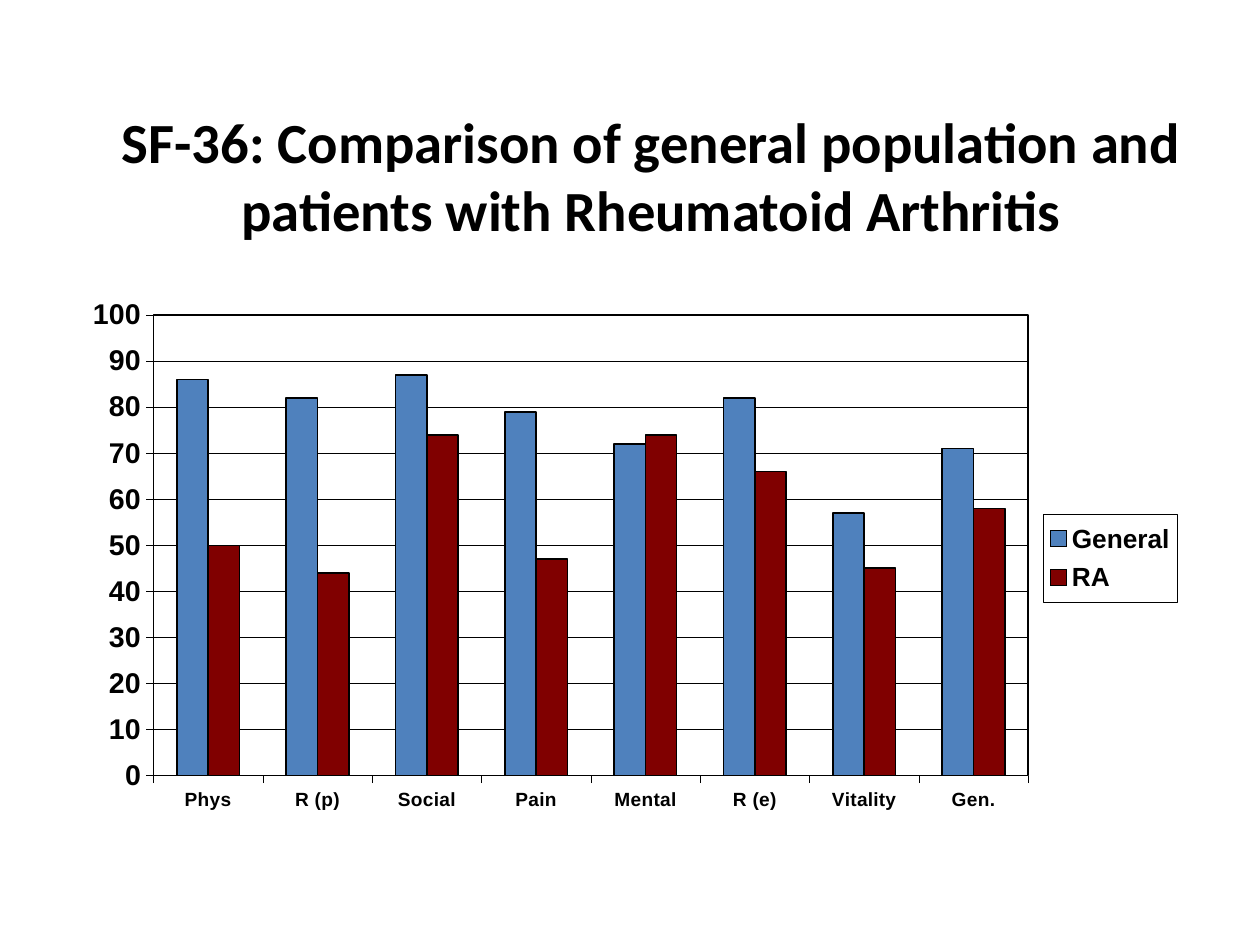
from lxml.etree import SubElement
from pptx import Presentation
from pptx.chart.data import CategoryChartData
from pptx.dml.color import RGBColor
from pptx.enum.chart import XL_CHART_TYPE, XL_LEGEND_POSITION, XL_TICK_LABEL_POSITION, XL_TICK_MARK
from pptx.enum.text import MSO_ANCHOR, MSO_AUTO_SIZE, PP_ALIGN
from pptx.oxml import parse_xml
from pptx.oxml.ns import nsdecls, qn
from pptx.util import Cm, Pt

COLORS = {"ink": "000000", "general": "4F81BD", "ra": "800000"}
CATEGORIES = ["Phys", "R (p)", "Social", "Pain", "Mental", "R (e)", "Vitality", "Gen."]
SERIES = [
    ("General", "general", [86, 82, 87, 79, 72, 82, 57, 71]),
    ("RA", "ra", [50, 44, 74, 47, 74, 66, 45, 58]),
]


def rgb(name):
    return RGBColor.from_string(COLORS[name])


def frame_xml(width):
    """Unfilled chart area with a black outline, width in points."""
    return parse_xml(
        f'<c:spPr {nsdecls("c", "a")}><a:noFill/><a:ln w="{Pt(width)}"><a:solidFill>'
        f'<a:srgbClr val="{COLORS["ink"]}"/></a:solidFill></a:ln></c:spPr>')


def layout_xml(x, y, w, h, inner=False):
    """Manual layout, in fractions of the chart."""
    layout = parse_xml(f'<c:layout {nsdecls("c")}><c:manualLayout/></c:layout>')
    values = [("layoutTarget", "inner")] if inner else []
    values += [("xMode", "edge"), ("yMode", "edge"), ("x", x), ("y", y), ("w", w), ("h", h)]
    for tag, value in values:
        SubElement(layout[0], qn(f"c:{tag}")).set("val", str(value))
    return layout


class Deck:
    def __init__(self, width, height):
        self.prs = Presentation()
        self.prs.slide_width, self.prs.slide_height = Cm(width), Cm(height)
        self.s = self.prs.slides.add_slide(self.prs.slide_layouts[5])

    def font(self, font, size, name="Arial"):
        font.name, font.size, font.bold = name, Pt(size), True
        font.color.rgb = rgb("ink")

    def line(self, line, width):
        line.color.rgb = rgb("ink")
        line.width = Pt(width)

    def title(self, text, x, y, w, h):
        sp = self.s.shapes.title
        sp.left, sp.top, sp.width, sp.height = Cm(x), Cm(y), Cm(w), Cm(h)
        tf = sp.text_frame
        tf.text = text
        tf.word_wrap = True
        tf.auto_size = MSO_AUTO_SIZE.NONE
        tf.vertical_anchor = MSO_ANCHOR.MIDDLE
        p = tf.paragraphs[0]
        p.alignment = PP_ALIGN.CENTER
        self.font(p.font, 32.4, "Calibri")

    def axis(self, axis, size):
        axis.major_tick_mark = XL_TICK_MARK.OUTSIDE
        axis.minor_tick_mark = XL_TICK_MARK.NONE
        self.font(axis.tick_labels.font, size)
        self.line(axis.format.line, 0.23)

    def legend(self, chart):
        chart.has_legend = True
        legend = chart.legend
        legend.position = XL_LEGEND_POSITION.RIGHT
        legend.include_in_layout = False
        self.font(legend.font, 15)
        overlay = legend._element.find(qn("c:overlay"))
        overlay.addprevious(layout_xml(0.85, 0.42, 0.12, 0.16))
        overlay.addnext(frame_xml(0.23))

    def column_chart(self, x, y, w, h):
        data = CategoryChartData()
        data.categories = CATEGORIES
        for name, _, values in SERIES:
            data.add_series(name, values)
        chart = self.s.shapes.add_chart(
            XL_CHART_TYPE.COLUMN_CLUSTERED, Cm(x), Cm(y), Cm(w), Cm(h), data).chart
        chart.has_title = False
        self.font(chart.font, 16.3)

        self.axis(chart.category_axis, 10.9)
        chart.category_axis.tick_label_position = XL_TICK_LABEL_POSITION.LOW
        value_axis = chart.value_axis
        self.axis(value_axis, 16.3)
        value_axis.minimum_scale, value_axis.maximum_scale = 0, 100
        value_axis.major_unit = 10
        value_axis.has_major_gridlines = True
        self.line(value_axis.major_gridlines.format.line, 0.23)

        plot = chart.plots[0]
        plot.gap_width, plot.overlap = 150, 0
        plot.vary_by_categories = False
        for series, (_, color, _) in zip(plot.series, SERIES):
            series.format.fill.solid()
            series.format.fill.fore_color.rgb = rgb(color)
            self.line(series.format.line, 0.91)

        area = chart._chartSpace.chart.plotArea
        for old in area.findall(qn("c:layout")):
            area.remove(old)
        area.insert(0, layout_xml(0.056, 0.057, 0.781, 0.839, inner=True))
        area.append(frame_xml(0.91))
        self.legend(chart)


def main():
    deck = Deck(25.4, 19.05)
    deck.title("SF-36: Comparison of general population and patients with Rheumatoid Arthritis",
               1.7, 2.13, 22.86, 2.8)
    deck.column_chart(1.83, 5.72, 22.58, 11.07)
    deck.prs.save("out.pptx")


if __name__ == "__main__":
    main()
